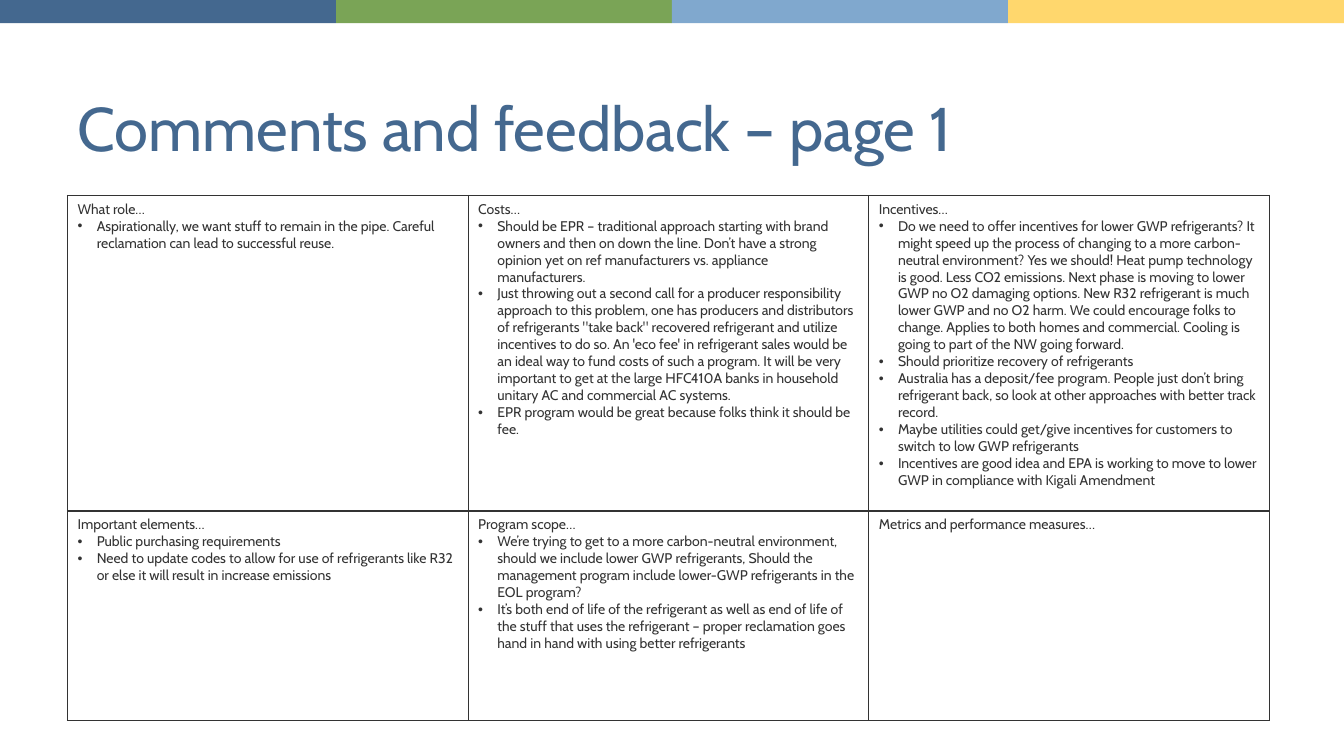
"""Build the comments and feedback slide with its six-topic table."""
from dataclasses import dataclass

from lxml.etree import SubElement
from pptx import Presentation
from pptx.dml.color import RGBColor
from pptx.enum.shapes import MSO_SHAPE
from pptx.enum.text import MSO_ANCHOR
from pptx.oxml.ns import qn
from pptx.slide import Slide
from pptx.table import _Cell
from pptx.text.text import _Paragraph
from pptx.util import Inches, Pt

COLORS = {
    "blue": "44688F",
    "green": "7AA456",
    "sky": "80A8CE",
    "yellow": "FFD76D",
    "text": "333333",
}
BAND_COLORS = ("blue", "green", "sky", "yellow")
TITLE_FORMAT = {"name": "Cabin", "size": Pt(44)}
BODY_FORMAT = {"name": "Cabin", "size": Pt(10)}
TITLE_FRAME = {"word_wrap": True, "vertical_anchor": MSO_ANCHOR.BOTTOM}
PLAIN_TABLE = {"first_row": False, "horz_banding": False}

SLIDE_WIDTH, SLIDE_HEIGHT = 13.33, 7.5
LEFT, CONTENT_WIDTH = 0.67, 11.92
ROW_HEIGHTS = (3.13, 2.08)
COLUMN_COUNT = 3
BULLET_INDENT = 0.19


@dataclass(frozen=True)
class Topic:
    heading: str
    comments: tuple[str, ...] = ()


TOPICS = (
    Topic("What role…", (
        "Aspirationally, we want stuff to remain in the pipe. Careful "
        "reclamation can lead to successful reuse.",
    )),
    Topic("Costs…", (
        "Should be EPR – traditional approach starting with brand owners and "
        "then on down the line. Don’t have a strong opinion yet on ref "
        "manufacturers vs. appliance manufacturers.",
        "Just throwing out a second call for a producer responsibility "
        "approach to this problem, one has producers and distributors of "
        "refrigerants \"take back\" recovered refrigerant and utilize "
        "incentives to do so. An 'eco fee' in refrigerant sales would be an "
        "ideal way to fund costs of such a program. It will be very important "
        "to get at the large HFC410A banks in household unitary AC and "
        "commercial AC systems.",
        "EPR program would be great because folks think it should be fee.",
    )),
    Topic("Incentives…", (
        "Do we need to offer incentives for lower GWP refrigerants? It might "
        "speed up the process of changing to a more carbon-neutral "
        "environment? Yes we should! Heat pump technology is good. Less CO2 "
        "emissions. Next phase is moving to lower GWP no O2 damaging options. "
        "New R32 refrigerant is much lower GWP and no O2 harm. We could "
        "encourage folks to change. Applies to both homes and commercial. "
        "Cooling is going to part of the NW going forward.",
        "Should prioritize recovery of refrigerants",
        "Australia has a deposit/fee program. People just don’t bring "
        "refrigerant back, so look at other approaches with better track "
        "record.",
        "Maybe utilities could get/give incentives for customers to switch to "
        "low GWP refrigerants",
        "Incentives are good idea and EPA is working to move to lower GWP in "
        "compliance with Kigali Amendment",
    )),
    Topic("Important elements…", (
        "Public purchasing requirements",
        "Need to update codes to allow for use of refrigerants like R32 or "
        "else it will result in increase emissions",
    )),
    Topic("Program scope…", (
        "We’re trying to get to a more carbon-neutral environment, should we "
        "include lower GWP refrigerants, Should the management program "
        "include lower-GWP refrigerants in the EOL program?",
        "It’s both end of life of the refrigerant as well as end of life of "
        "the stuff that uses the refrigerant – proper reclamation goes hand "
        "in hand with using better refrigerants",
    )),
    Topic("Metrics and performance measures…"),
)


def apply_format(target: object, values: dict) -> None:
    for name, value in values.items():
        setattr(target, name, value)


def write_text(paragraph: _Paragraph, text: str, values: dict, color: str) -> None:
    run = paragraph.add_run()
    run.text = text
    apply_format(run.font, values)
    run.font.color.rgb = RGBColor.from_string(COLORS[color])


def add_bullet(paragraph: _Paragraph) -> None:
    properties = paragraph._p.get_or_add_pPr()
    properties.set("marL", str(Inches(BULLET_INDENT)))
    properties.set("indent", str(-Inches(BULLET_INDENT)))
    SubElement(properties, qn("a:buFont"), typeface="Arial")
    SubElement(properties, qn("a:buChar"), char="•")


def add_borders(cell: _Cell) -> None:
    properties = cell._tc.get_or_add_tcPr()
    for side in ("lnL", "lnR", "lnT", "lnB"):
        line = SubElement(properties, qn(f"a:{side}"), w=str(Pt(1)))
        fill = SubElement(line, qn("a:solidFill"))
        SubElement(fill, qn("a:srgbClr"), val=COLORS["text"])


def fill_cell(cell: _Cell, topic: Topic) -> None:
    add_borders(cell)
    cell.fill.background()
    text_frame = cell.text_frame
    write_text(text_frame.paragraphs[0], topic.heading, BODY_FORMAT, "text")
    for comment in topic.comments:
        paragraph = text_frame.add_paragraph()
        add_bullet(paragraph)
        write_text(paragraph, comment, BODY_FORMAT, "text")


def add_color_band(slide: Slide) -> None:
    width = SLIDE_WIDTH / len(BAND_COLORS)
    for index, color in enumerate(BAND_COLORS):
        shape = slide.shapes.add_shape(
            MSO_SHAPE.RECTANGLE,
            Inches(index * width), Inches(0), Inches(width), Inches(0.23),
        )
        shape.shadow.inherit = False
        shape.fill.solid()
        shape.fill.fore_color.rgb = RGBColor.from_string(COLORS[color])
        shape.line.fill.background()


def add_title(slide: Slide, text: str) -> None:
    shape = slide.shapes.add_textbox(
        Inches(LEFT), Inches(0.43), Inches(CONTENT_WIDTH), Inches(1.25)
    )
    apply_format(shape.text_frame, TITLE_FRAME)
    paragraph = shape.text_frame.paragraphs[0]
    paragraph.line_spacing = 0.9
    write_text(paragraph, text, TITLE_FORMAT, "blue")


def add_topic_table(slide: Slide) -> None:
    table = slide.shapes.add_table(
        len(ROW_HEIGHTS), COLUMN_COUNT,
        Inches(LEFT), Inches(1.94), Inches(CONTENT_WIDTH), Inches(sum(ROW_HEIGHTS)),
    ).table
    apply_format(table, PLAIN_TABLE)
    for row, height in zip(table.rows, ROW_HEIGHTS):
        row.height = Inches(height)
    for cell, topic in zip(table.iter_cells(), TOPICS):
        fill_cell(cell, topic)


def main() -> None:
    presentation = Presentation()
    presentation.slide_width = Inches(SLIDE_WIDTH)
    presentation.slide_height = Inches(SLIDE_HEIGHT)
    slide = presentation.slides.add_slide(presentation.slide_layouts[6])
    add_color_band(slide)
    add_title(slide, "Comments and feedback – page 1")
    add_topic_table(slide)
    presentation.save("out.pptx")


if __name__ == "__main__":
    main()
